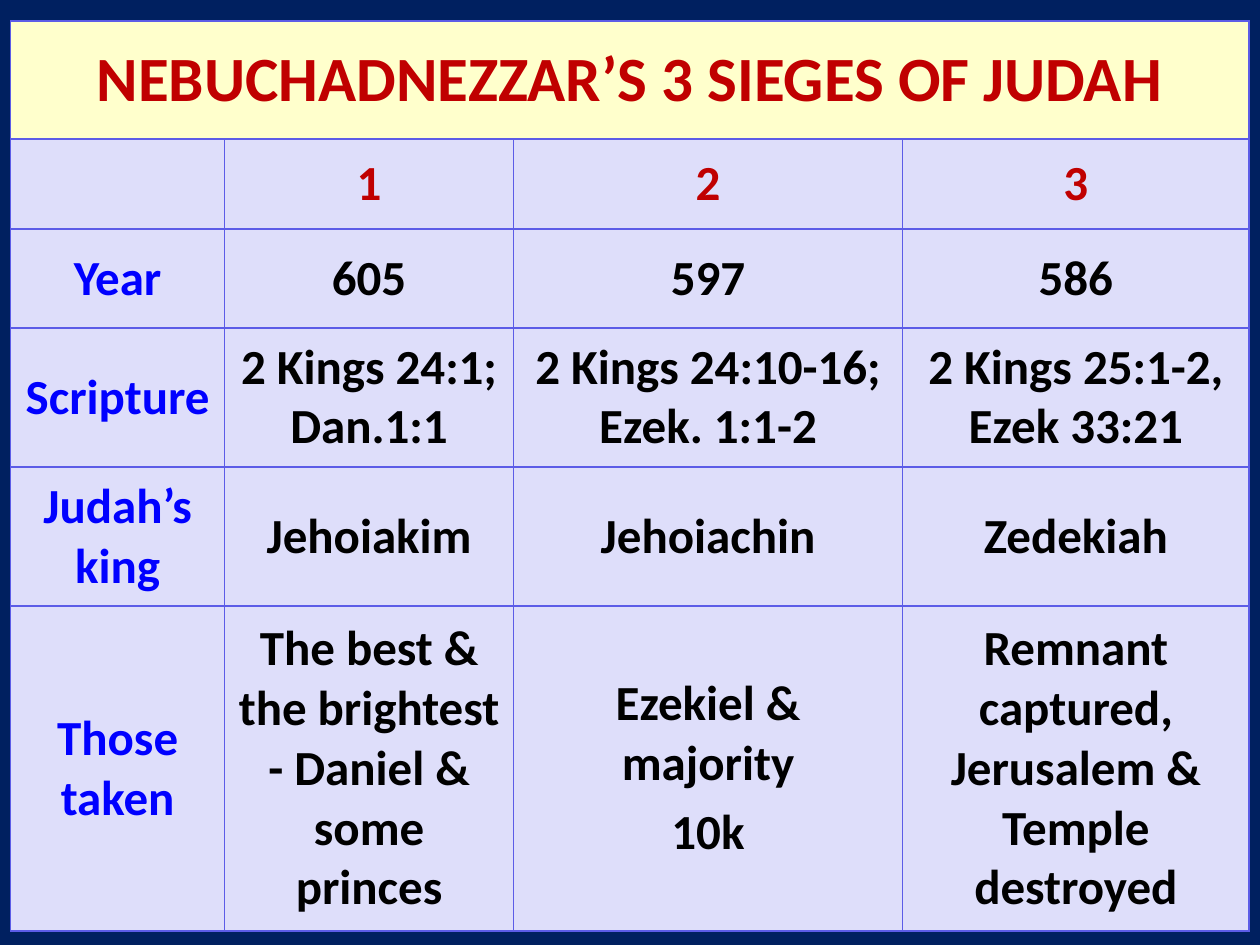
"""Build a slide with a table of Nebuchadnezzar's three sieges of Judah."""
from lxml import etree
from pptx import Presentation
from pptx.dml.color import RGBColor
from pptx.enum.text import MSO_ANCHOR, PP_ALIGN
from pptx.oxml.ns import qn
from pptx.util import Pt

TITLE = "NEBUCHADNEZZAR’S 3 SIEGES OF JUDAH"
SIEGES = [
    ["", "1", "2", "3"],
    ["Year", "605", "597", "586"],
    ["Scripture", "2 Kings 24:1; Dan.1:1", "2 Kings 24:10-16; Ezek. 1:1-2",
     "2 Kings 25:1-2, Ezek 33:21"],
    ["Judah’s king", "Jehoiakim", "Jehoiachin", "Zedekiah"],
    ["Those taken", "The best & the brightest - Daniel & some princes",
     "Ezekiel & majority\n10k", "Remnant captured, Jerusalem & Temple destroyed"],
]
COLUMN_WIDTHS = [122.4, 165, 222.4, 198]
ROW_HEIGHTS = [67.4, 51.6, 56.4, 79.4, 79.6, 185.6]
LEFT, TOP = 6, 12

NAVY = RGBColor(0x00, 0x20, 0x60)
CREAM = RGBColor(0xFF, 0xFF, 0xCC)
LAVENDER = RGBColor(0xDE, 0xDE, 0xFA)
RED = RGBColor(0xC0, 0x00, 0x00)
BLUE = RGBColor(0x00, 0x00, 0xFF)
BLACK = RGBColor(0x00, 0x00, 0x00)
BORDER = RGBColor(0x5C, 0x5C, 0xE7)
CENTER = PP_ALIGN.CENTER
MIDDLE = MSO_ANCHOR.MIDDLE


def add_borders(cell):
    properties = cell._tc.get_or_add_tcPr()
    for position, side in enumerate(("a:lnL", "a:lnR", "a:lnT", "a:lnB")):
        line = etree.Element(qn(side), w=str(Pt(1)))
        fill = etree.SubElement(line, qn("a:solidFill"))
        etree.SubElement(fill, qn("a:srgbClr"), val=str(BORDER))
        properties.insert(position, line)


def fill_cell(cell, text, size, color, background):
    cell.fill.solid()
    cell.fill.fore_color.rgb = background
    cell.vertical_anchor = MIDDLE
    add_borders(cell)
    cell.text_frame.text = text
    for index, paragraph in enumerate(cell.text_frame.paragraphs):
        paragraph.alignment = CENTER
        paragraph.space_before = Pt(0.2 * size if index else 0)
        font = paragraph.font
        for run in paragraph.runs:
            font = run.font
            font.name = "Calibri"
            font.size = Pt(size)
            font.bold = True
            font.color.rgb = color


def text_color(row, column):
    if row == 0:
        return RED
    return BLUE if column == 0 else BLACK


def main():
    deck = Presentation()
    deck.slide_width, deck.slide_height = Pt(720), Pt(540)
    slide = deck.slides.add_slide(deck.slide_layouts[6])
    slide.background.fill.solid()
    slide.background.fill.fore_color.rgb = NAVY

    table = slide.shapes.add_table(
        len(ROW_HEIGHTS), len(COLUMN_WIDTHS), Pt(LEFT), Pt(TOP),
        Pt(sum(COLUMN_WIDTHS)), Pt(sum(ROW_HEIGHTS))).table
    for column, width in zip(table.columns, COLUMN_WIDTHS):
        column.width = Pt(width)
    for row, height in zip(table.rows, ROW_HEIGHTS):
        row.height = Pt(height)

    table.cell(0, 0).merge(table.cell(0, len(COLUMN_WIDTHS) - 1))
    for column in range(len(COLUMN_WIDTHS)):
        fill_cell(table.cell(0, column), "" if column else TITLE, 36, RED, CREAM)
    for row, texts in enumerate(SIEGES):
        for column, text in enumerate(texts):
            fill_cell(table.cell(row + 1, column), text, 28,
                      text_color(row, column), LAVENDER)
    deck.save("out.pptx")


if __name__ == "__main__":
    main()
